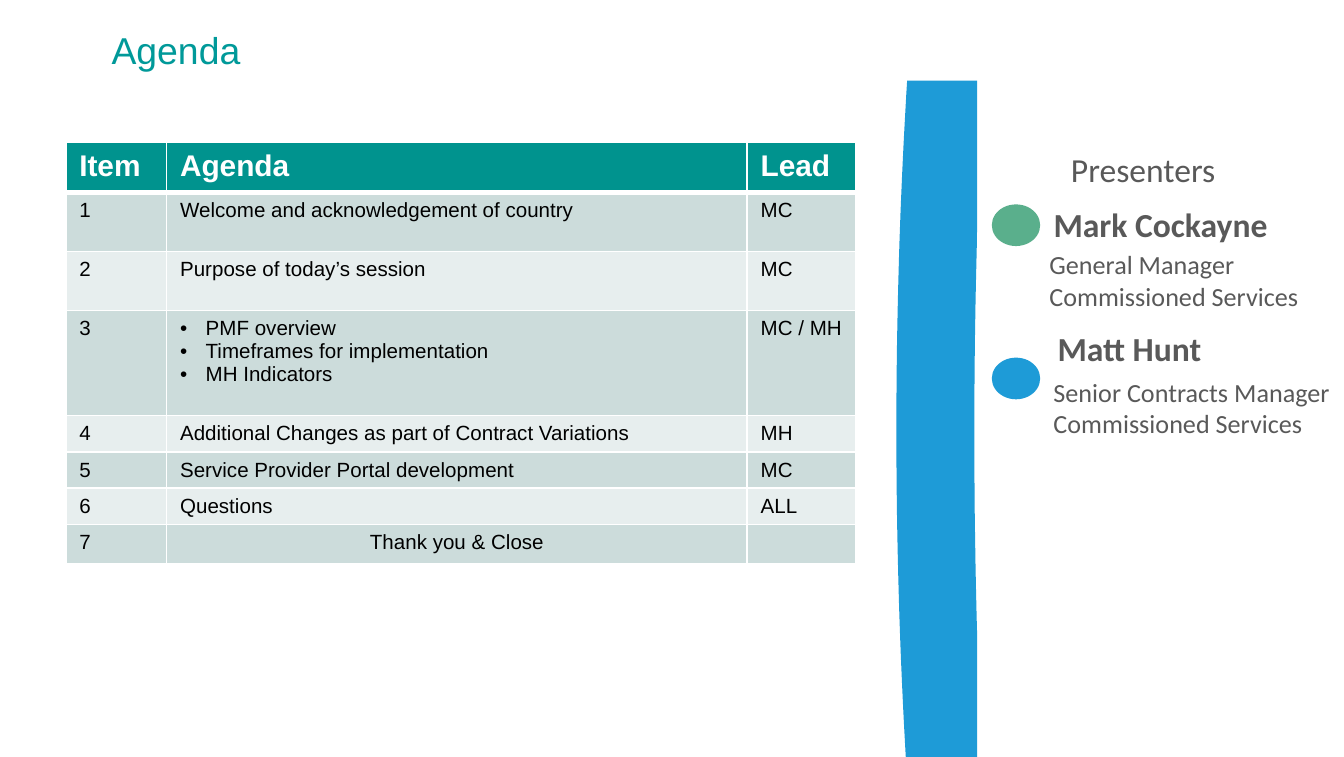
from lxml import etree
from pptx import Presentation
from pptx.dml.color import RGBColor
from pptx.enum import shapes, text
from pptx.oxml import ns
from pptx.util import Inches, Pt

TEAL, BLUE, GREEN, GREY, WHITE = "00938E", "1E9BD7", "5AAF8C", "595959", "FFFFFF"
BANDS = ["E7EEEE", "CCDCDB"]


def paint(color_format, hex_color):
    """Give a fill or a font a solid colour."""
    if hasattr(color_format, "solid"):
        color_format.solid()
        color_format.fore_color.rgb = RGBColor.from_string(hex_color)
    else:
        color_format.color.rgb = RGBColor.from_string(hex_color)


def write(frame, content, size=11, color="000000", font="Arial", bold=False,
          align=text.PP_ALIGN.LEFT, bullets=False):
    """Fill a text frame, one paragraph for each line of content."""
    for number, line in enumerate(content.split("\n")):
        paragraph = frame.add_paragraph() if number else frame.paragraphs[0]
        paragraph.alignment = align
        if bullets:
            properties = paragraph._p.get_or_add_pPr()
            properties.set("marL", str(Inches(0.19)))
            properties.set("indent", str(-Inches(0.19)))
            etree.SubElement(properties, ns.qn("a:buFont"), typeface="Arial")
            etree.SubElement(properties, ns.qn("a:buChar"), char="•")
        if not line:
            etree.SubElement(paragraph._p, ns.qn("a:endParaRPr"), sz=str(size * 100))
            continue
        run = paragraph.add_run()
        run.text = line
        run.font.size, run.font.name, run.font.bold = Pt(size), font, bold
        paint(run.font, color)


prs = Presentation()
prs.slide_width, prs.slide_height = Inches(10), Inches(5.63)
slide = prs.slides.add_slide(prs.slide_layouts[5])

# Title
title = slide.shapes.title
title.left, title.top = Inches(0.83), Inches(0.19)
title.width, title.height = Inches(4.17), Inches(0.35)
title_frame = title.text_frame
title_frame.margin_left = title_frame.margin_right = title_frame.margin_bottom = 0
title_frame.margin_top = Inches(0.01)
title_frame.auto_size = text.MSO_AUTO_SIZE.NONE
title_frame.vertical_anchor = text.MSO_ANCHOR.MIDDLE
write(title_frame, "Agenda", size=20, color="009999")

# Agenda table
agenda_rows = [
    ("Item", "Agenda", "Lead"),
    ("1", "Welcome and acknowledgement of country", "MC"),
    ("2", "Purpose of today’s session", "MC"),
    ("3", "PMF overview\nTimeframes for implementation\nMH Indicators", "MC / MH"),
    ("4", "Additional Changes as part of Contract Variations", "MH"),
    ("5", "Service Provider Portal development", "MC"),
    ("6", "Questions", "ALL"),
    ("7", "Thank you & Close", ""),
]
row_heights = [0.37, 0.44, 0.44, 0.78, 0.27, 0.27, 0.27, 0.27]
column_widths = [0.75, 4.32, 0.81]
agenda = slide.shapes.add_table(
    len(agenda_rows), len(column_widths), Inches(0.49), Inches(1.06),
    Inches(sum(column_widths)), Inches(sum(row_heights))).table
for column, width in zip(agenda.columns, column_widths):
    column.width = Inches(width)
for r, (entries, height) in enumerate(zip(agenda_rows, row_heights)):
    agenda.rows[r].height = Inches(height)
    for c, entry in enumerate(entries):
        cell = agenda.cell(r, c)
        if r == 0:
            write(cell.text_frame, entry, size=16, color=WHITE, bold=True)
        else:
            closing = entry == "Thank you & Close"
            write(cell.text_frame, entry, bullets="\n" in entry,
                  align=text.PP_ALIGN.CENTER if closing else text.PP_ALIGN.LEFT)
        paint(cell.fill, BANDS[r % 2] if r else TEAL)
        for position, side in enumerate("LRTB"):
            under_header = (r, side) in [(0, "B"), (1, "T")]
            border = etree.Element(ns.qn(f"a:ln{side}"), w=str(Pt(3 if under_header else 1)))
            solid = etree.SubElement(border, ns.qn("a:solidFill"))
            etree.SubElement(solid, ns.qn("a:srgbClr"), val=WHITE)
            cell._tc.get_or_add_tcPr().insert(position, border)

# Curved divider: both edges are shallow parabolas, the right one cut off at 7.27
steps = 52
heights = [0.6 + 5.2 * i / steps for i in range(steps + 1)]
left_edge = [(6.67 + 0.08 * ((y - 3.2) / 2.6) ** 2, y) for y in heights]
right_edge = [(min(7.27, 7.25 + 0.02 * ((y - 3.23) / 1.46) ** 2), y) for y in heights]
outline = [(Inches(x), Inches(y)) for x, y in left_edge + right_edge[::-1]]
builder = slide.shapes.build_freeform(*outline[0])
builder.add_line_segments(outline[1:], close=True)
divider = builder.convert_to_shape()

# Presenter markers
markers = [slide.shapes.add_shape(shapes.MSO_SHAPE.OVAL, Inches(7.38), Inches(top),
                                  Inches(0.36), Inches(0.31)) for top in (1.52, 2.66)]
for shape, color in zip([divider] + markers, [BLUE, GREEN, BLUE]):
    shape.shadow.inherit = False
    shape.line.fill.background()
    paint(shape.fill, color)

# Presenters
presenter_texts = [
    ("Presenters", 7.87, 1.06, 1.29, 0.4, 18, False),
    ("Mark Cockayne", 7.74, 1.47, 2.12, 0.4, 18, True),
    ("General Manager Commissioned Services", 7.71, 1.8, 2.18, 0.57, 14, False),
    ("Matt Hunt", 7.77, 2.39, 1.29, 0.4, 18, True),
    ("Senior Contracts Manager\nCommissioned Services", 7.74, 2.75, 2.26, 0.57, 14, False),
]
for content, left, top, width, height, size, bold in presenter_texts:
    frame = slide.shapes.add_textbox(Inches(left), Inches(top),
                                     Inches(width), Inches(height)).text_frame
    frame.word_wrap = True
    write(frame, content, size=size, color=GREY, font="Calibri", bold=bold)

prs.save("out.pptx")
